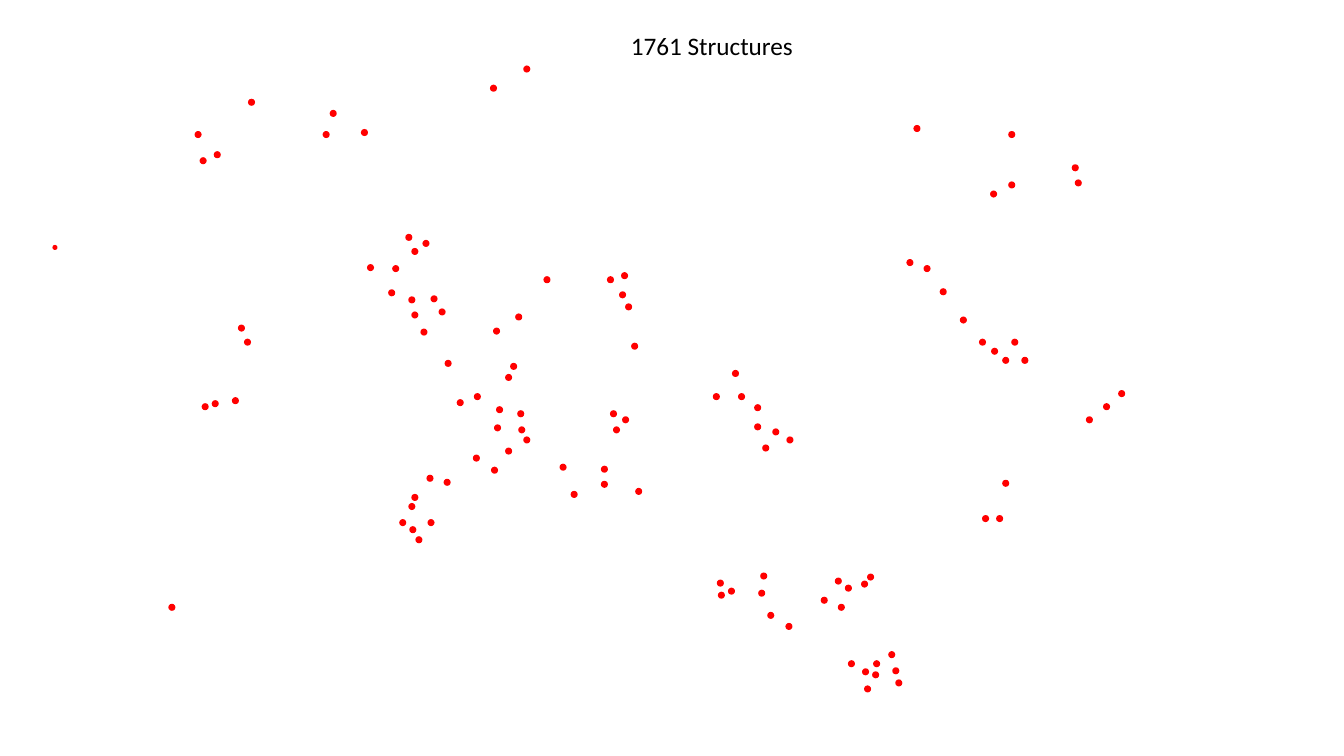
from pptx import Presentation
from pptx import util as u
from pptx.dml.color import RGBColor
from pptx.enum import shapes, text

PX = 9144  # EMU per px, 100 px to the inch
SLIDE_W, SLIDE_H = 1333, 750
DOT, SMALL_DOT = 7, 5
FONT = "Calibri"
COLORS = {"dot": "FF0000", "title": "000000"}

# Left and top of every dot within the map, by area
OUTLIER = (52, 243)
STRUCTURES = {
    "north-west": [
        (198, 156), (212, 150), (193, 130), (246, 98), (327, 109),
        (320, 130), (358, 128), (486, 84), (519, 65)],
    "north-east": [
        (906, 124), (1000, 130), (1063, 163), (1066, 178), (1000, 180),
        (982, 189)],
    "east": [
        (899, 257), (916, 263), (932, 286), (952, 314), (971, 336),
        (983, 345), (994, 354), (1013, 354), (1003, 336), (1109, 387),
        (1094, 400), (1077, 413), (988, 511), (974, 511), (994, 476)],
    "centre north": [
        (614, 289), (602, 274), (616, 270), (620, 301), (626, 340),
        (419, 238), (408, 246), (402, 232), (427, 293), (435, 306),
        (405, 294), (408, 309), (417, 326), (441, 357), (385, 287),
        (389, 263), (364, 262), (501, 371), (506, 360), (489, 325),
        (511, 311), (539, 274)],
    "centre": [
        (453, 396), (470, 390), (617, 413), (605, 407), (608, 423),
        (513, 407), (492, 403), (490, 421), (514, 423), (501, 444),
        (519, 433), (555, 460), (596, 462), (596, 477), (630, 484),
        (566, 487), (487, 463), (469, 451)],
    "centre south": [
        (440, 475), (423, 471), (408, 490), (405, 499), (406, 522),
        (424, 515), (396, 515), (412, 532)],
    "centre east": [
        (707, 390), (726, 367), (732, 390), (748, 401), (748, 420),
        (766, 425), (780, 433), (756, 441)],
    "south": [
        (860, 569), (854, 576), (838, 580), (828, 573), (814, 592),
        (831, 599), (779, 618), (761, 607), (752, 585), (754, 568),
        (722, 583), (712, 587), (711, 575)],
    "far south": [
        (866, 655), (841, 655), (855, 663), (865, 666), (857, 680),
        (881, 646), (885, 662), (888, 674)],
    "west": [
        (167, 599), (210, 397), (230, 394), (200, 400), (242, 336),
        (236, 322)],
}


def rgb(name):
    return RGBColor.from_string(COLORS[name])


def add_dot(parent, left, top, size):
    s = parent.shapes.add_shape(
        shapes.MSO_SHAPE.OVAL, left * PX, top * PX, size * PX, size * PX)
    s.shadow.inherit = False
    s.fill.solid()
    s.fill.fore_color.rgb = rgb("dot")
    s.line.fill.background()


def add_map(slide, left, top):
    """Group all structure dots, offset from the map's top left corner."""
    group = slide.shapes.add_group_shape()
    add_dot(group, left + OUTLIER[0], top + OUTLIER[1], SMALL_DOT)
    for dots in STRUCTURES.values():
        for x, y in dots:
            add_dot(group, left + x, top + y, DOT)


def add_title(slide, left, top, width, height, title):
    s = slide.shapes.add_textbox(left * PX, top * PX, width * PX, height * PX)
    tf = s.text_frame
    tf.word_wrap = False
    tf.auto_size = text.MSO_AUTO_SIZE.SHAPE_TO_FIT_TEXT
    r = tf.paragraphs[0].add_run()
    r.text = title
    r.font.name = FONT
    r.font.size = u.Pt(18)
    r.font.color.rgb = rgb("title")


def main():
    prs = Presentation()
    prs.slide_width, prs.slide_height = SLIDE_W * PX, SLIDE_H * PX
    slide = prs.slides.add_slide(prs.slide_layouts[6])
    add_map(slide, 0, 0)
    add_title(slide, 616, 25, 183, 40, "1761 Structures")
    prs.save("out.pptx")


if __name__ == "__main__":
    main()
